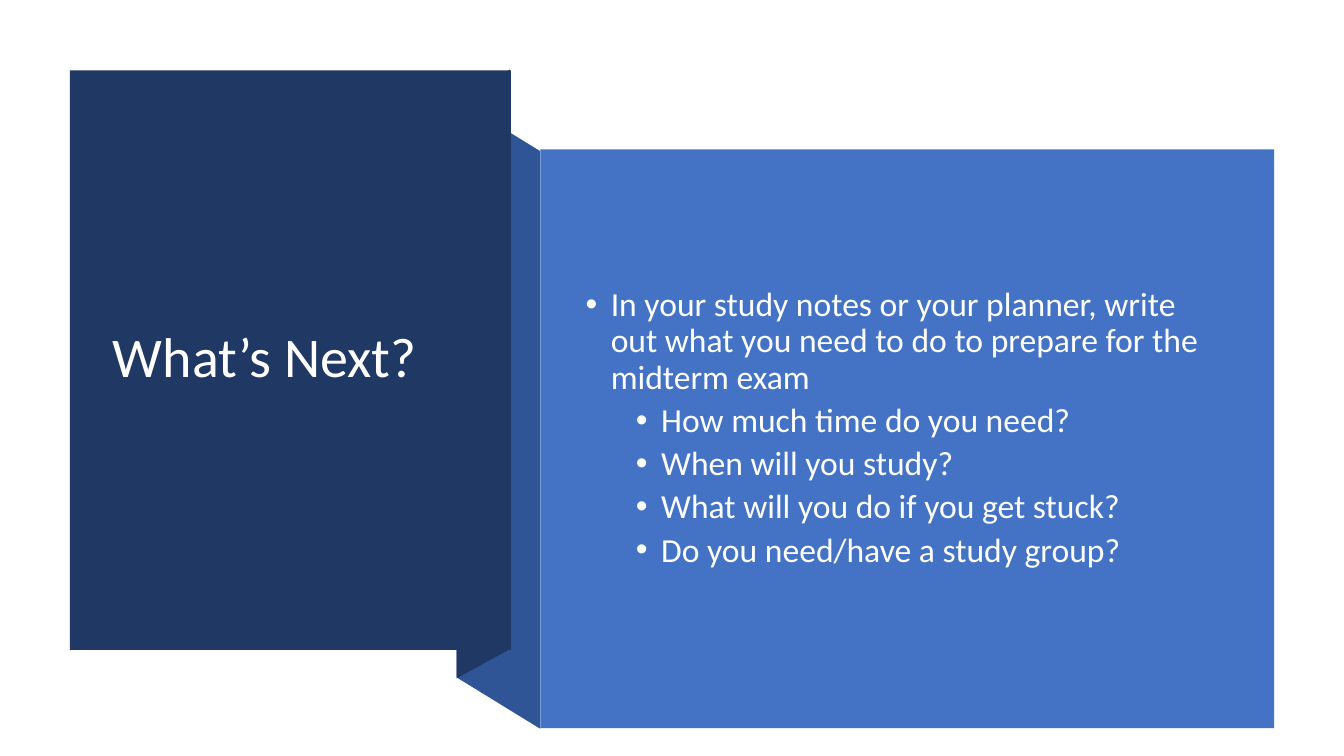
"""Build the "What's Next?" slide with its folded ribbon panels."""
from dataclasses import dataclass

from lxml.etree import SubElement
from pptx import Presentation
from pptx.dml.color import RGBColor
from pptx.enum.shapes import MSO_SHAPE as Kind
from pptx.enum.text import MSO_ANCHOR as Anchor
from pptx.oxml.ns import qn
from pptx.shapes.autoshape import Shape
from pptx.slide import Slide
from pptx.util import Pt

FONT = "Calibri"
NAVY, MID, BLUE = "203864", "2F5597", "4472C4"


@dataclass
class Box:
    left: float
    top: float
    width: float
    height: float


@dataclass
class Fold:
    color: str
    points: list[tuple[float, float]]


@dataclass
class Panel:
    color: str
    box: Box


@dataclass
class Line:
    text: str
    size: float
    color: str
    level: int = 0
    before: float = 0
    indent: float = 0


@dataclass
class Block:
    box: Box
    lines: list[Line]


def rgb(code: str) -> RGBColor:
    """Turn a hex string into a colour."""
    return RGBColor.from_string(code)


def paint(shape: Shape, color: str) -> None:
    """Fill a shape flat, with no line or shadow."""
    shape.shadow.inherit = False
    shape.fill.solid()
    shape.fill.fore_color.rgb = rgb(color)
    shape.line.fill.background()


def draw_fold(slide: Slide, fold: Fold) -> None:
    """Draw one slanted side of the ribbon."""
    first, *rest = [(Pt(x), Pt(y)) for x, y in fold.points]
    pen = slide.shapes.build_freeform(*first)
    pen.add_line_segments(rest, close=True)
    paint(pen.convert_to_shape(), fold.color)


def draw_panel(slide: Slide, panel: Panel) -> None:
    """Draw one flat face of the ribbon."""
    box = panel.box
    shape = slide.shapes.add_shape(
        Kind.RECTANGLE, Pt(box.left), Pt(box.top), Pt(box.width), Pt(box.height))
    paint(shape, panel.color)


def draw_block(slide: Slide, block: Block) -> None:
    """Write the lines of a text block, bulleted where indented."""
    box = block.box
    frame = slide.shapes.add_textbox(
        Pt(box.left), Pt(box.top), Pt(box.width), Pt(box.height)).text_frame
    frame.word_wrap = True
    frame.vertical_anchor = Anchor.MIDDLE
    for index, line in enumerate(block.lines):
        para = frame.add_paragraph() if index else frame.paragraphs[0]
        para.level = line.level
        para.line_spacing = 0.9
        para.space_before = Pt(line.before)
        if line.indent:
            props = para._p.get_or_add_pPr()
            props.set("marL", str(Pt(line.indent)))
            props.set("indent", str(Pt(-18)))
            SubElement(props, qn("a:buFont"), typeface="Arial")
            SubElement(props, qn("a:buChar"), char="•")
        run = para.add_run()
        run.text = line.text
        run.font.name = FONT
        run.font.size = Pt(line.size)
        run.font.color.rgb = rgb(line.color)


FOLDS = [
    Fold(MID, [(385.92, 520.56), (326.16, 483.84), (326.16, 71.28), (385.92, 108)]),
    Fold(NAVY, [(364.32, 463.68), (326.16, 484.56), (326.16, 70.56), (364.32, 49.68)]),
]
PANELS = [
    Panel(NAVY, Box(49.9, 50.2, 315, 414)),
    Panel(BLUE, Box(385.92, 106.7, 524.16, 413.4)),
]
TASK = ("In your study notes or your planner, write out what you need to do "
        "to prepare for the midterm exam")
ASKS = [
    "How much time do you need?",
    "When will you study?",
    "What will you do if you get stuck?",
    "Do you need/have a study group?",
]
BLOCKS = [
    Block(Box(73.6, 77, 267, 359.3), [Line("What’s Next?", 40, "FFFFFF")]),
    Block(Box(411.2, 135.4, 468.7, 341.3),
          [Line(TASK, 24, "FEFFFF", 0, 10, 18)]
          + [Line(ask, 24, "FEFFFF", 1, 5, 54) for ask in ASKS]),
]


def main() -> None:
    """Build and save the deck."""
    deck = Presentation()
    deck.slide_width, deck.slide_height = Pt(960), Pt(540)
    slide = deck.slides.add_slide(deck.slide_layouts[6])
    for fold in FOLDS:
        draw_fold(slide, fold)
    for panel in PANELS:
        draw_panel(slide, panel)
    for block in BLOCKS:
        draw_block(slide, block)
    deck.save("out.pptx")


if __name__ == "__main__":
    main()
